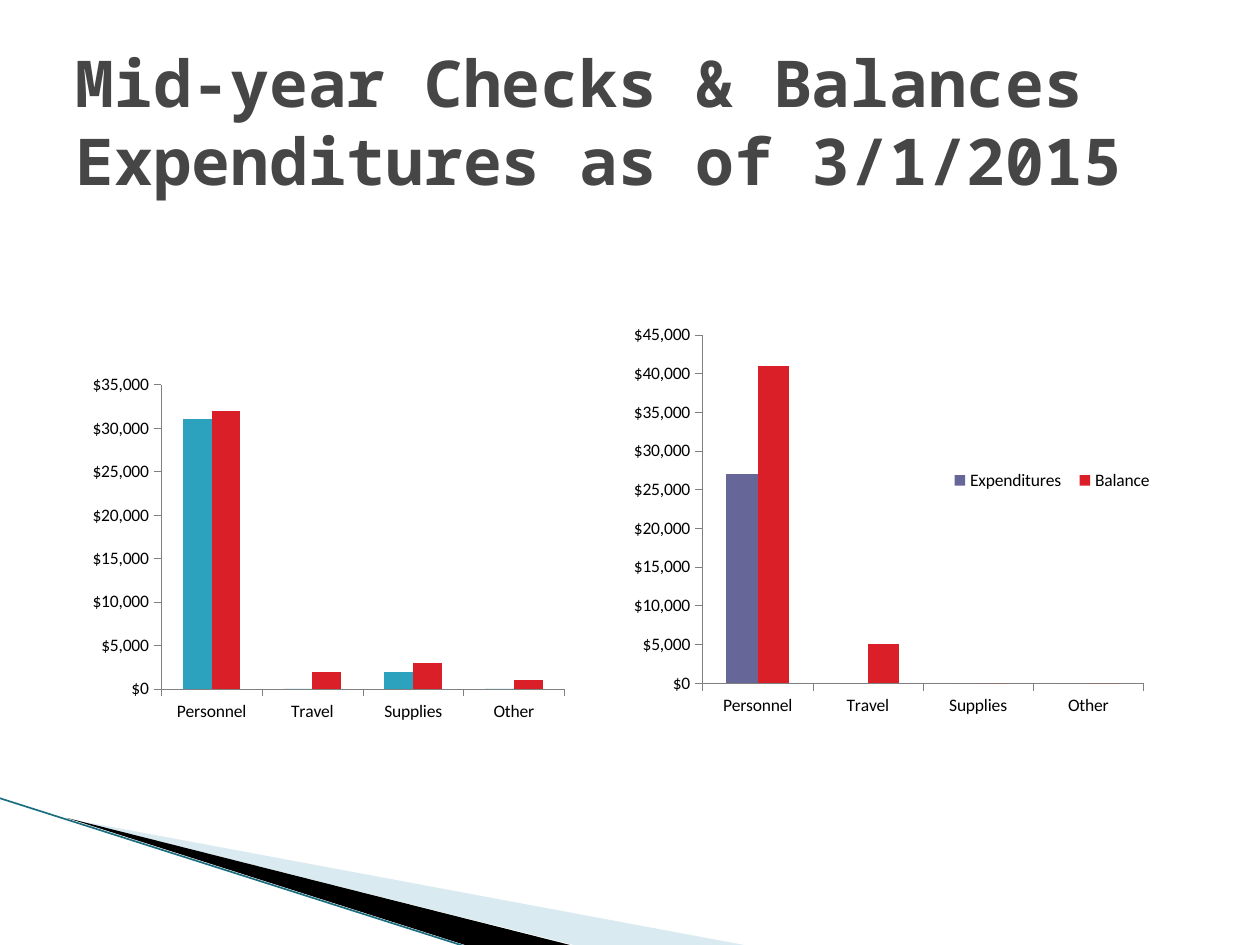
from lxml import etree
from pptx import Presentation
from pptx.chart.data import CategoryChartData
from pptx.dml.color import RGBColor
from pptx.enum.chart import XL_CHART_TYPE, XL_LEGEND_POSITION, XL_TICK_MARK
from pptx.enum.shapes import MSO_CONNECTOR
from pptx.enum.text import MSO_ANCHOR, PP_ALIGN
from pptx.oxml import parse_xml
from pptx.oxml.ns import nsdecls, qn
from pptx.util import Pt

SCALE = 914400 / 126
HUES = {"title": "464646", "pale": "A0CBDC", "black": "000000", "edge": "1A6E80",
        "axis": "808080", "white": "FFFFFF", "teal": "2DA2BF",
        "red": "DA1F28", "plum": "666699"}


def px(*nums):
    return [round(n * SCALE) for n in nums]


def place(parent, area, inner=False):
    """Give a chart part a manual layout, as fractions of the chart."""
    old = parent.find(qn("c:layout"))
    target = '<c:layoutTarget val="inner"/>' if inner else ""
    modes = '<c:xMode val="edge"/><c:yMode val="edge"/>'
    sizes = "".join(f'<c:{k} val="{v}"/>' for k, v in zip("xywh", area))
    new = parse_xml(f'<c:layout {nsdecls("c")}><c:manualLayout>{target}{modes}{sizes}'
                    '</c:manualLayout></c:layout>')
    if old is not None:
        parent.replace(old, new)
    elif inner:
        parent.insert(0, new)
    else:
        parent.find(qn("c:legendPos")).addnext(new)


deck = Presentation()
deck.slide_width, deck.slide_height = px(1260, 945)
slide = deck.slides.add_slide(deck.slide_layouts[5])
shapes = slide.shapes
hue = {name: RGBColor.from_string(code) for name, code in HUES.items()}

# Corner wedges
wedges = [("pale", 40, [(69, 819), (744, 945), (574, 945)]),
          ("black", 100, [(67, 818), (570, 945), (465, 945)])]
for name, alpha, points in wedges:
    pen = shapes.build_freeform(*points[0], scale=SCALE)
    pen.add_line_segments(points[1:], close=True)
    wedge = pen.convert_to_shape()
    wedge.shadow.inherit = False
    wedge.fill.solid()
    wedge.fill.fore_color.rgb = hue[name]
    wedge.line.fill.background()
    if alpha < 100:
        color = wedge._element.spPr.find(".//" + qn("a:srgbClr"))
        etree.SubElement(color, qn("a:alpha")).set("val", str(alpha * 1000))

# Corner edge line
edge = shapes.add_connector(MSO_CONNECTOR.STRAIGHT, *px(-1, 798, 467, 947))
edge.line.color.rgb = hue["edge"]
edge.line.width = Pt(0.95)
etree.SubElement(edge._element.spPr, qn("a:effectLst"))

# Title
title = shapes.title
title.left, title.top, title.width, title.height = px(63, 42, 1134, 157)
frame = title.text_frame
frame.text = "Mid-year Checks & Balances\vExpenditures as of 3/1/2015"
frame.word_wrap = True
frame.vertical_anchor = MSO_ANCHOR.MIDDLE
para = frame.paragraphs[0]
para.alignment = PP_ALIGN.LEFT
for run in para.runs:
    run.font.name = "Noto Sans Mono"
    run.font.size = Pt(36.9)
    run.font.bold = True
    run.font.color.rgb = hue["title"]

# Charts: box, plot area, legend area, axis top, series
charts = [
    ((62, 264, 661, 483), (0.15, 0.25, 0.61, 0.63), None, 35000,
     [("Series 1", "teal", (31000, 0, 2000, 0)),
      ("Series 2", "red", (32000, 2000, 3000, 1000))]),
    ((608, 304, 630, 441), (0.15, 0.07, 0.7, 0.79), (0.53, 0.37, 0.35, 0.06), 45000,
     [("Expenditures", "plum", (27000, 0, 0, 0)),
      ("Balance", "red", (41000, 5000, 0, 0))]),
]
for box, area, key, top, rows in charts:
    data = CategoryChartData()
    data.categories = ["Personnel", "Travel", "Supplies", "Other"]
    for name, _, vals in rows:
        data.add_series(name, vals)
    chart = shapes.add_chart(XL_CHART_TYPE.COLUMN_CLUSTERED, *px(*box), data).chart
    chart.has_title = False
    chart.font.name = "Calibri"
    chart.font.size = Pt(10)
    chart.font.color.rgb = hue["black"]

    # White ground
    chart._chartSpace.find(qn("c:chart")).addnext(parse_xml(
        f'<c:spPr {nsdecls("c", "a")}><a:solidFill><a:srgbClr val="{HUES["white"]}"/>'
        '</a:solidFill><a:ln><a:noFill/></a:ln></c:spPr>'))

    # Columns
    plot = chart.plots[0]
    plot.gap_width = 150
    plot.overlap = 0
    plot.vary_by_categories = False
    for bars, (_, name, _) in zip(plot.series, rows):
        bars.format.fill.solid()
        bars.format.fill.fore_color.rgb = hue[name]

    # Axes
    for axis in (chart.category_axis, chart.value_axis):
        axis.has_major_gridlines = False
        axis.major_tick_mark = XL_TICK_MARK.OUTSIDE
        axis.minor_tick_mark = XL_TICK_MARK.NONE
        axis.format.line.color.rgb = hue["axis"]
        axis.format.line.width = Pt(0.25)
    scale = chart.value_axis
    scale.minimum_scale, scale.maximum_scale, scale.major_unit = 0, top, 5000
    scale.tick_labels.number_format = "\\$#,##0"
    scale.tick_labels.number_format_is_linked = False
    place(chart._chartSpace.find(".//" + qn("c:plotArea")), area, inner=True)

    # Legend
    chart.has_legend = key is not None
    if key:
        chart.legend.position = XL_LEGEND_POSITION.BOTTOM
        chart.legend.include_in_layout = False
        place(chart.legend._element, key)

deck.save("out.pptx")
